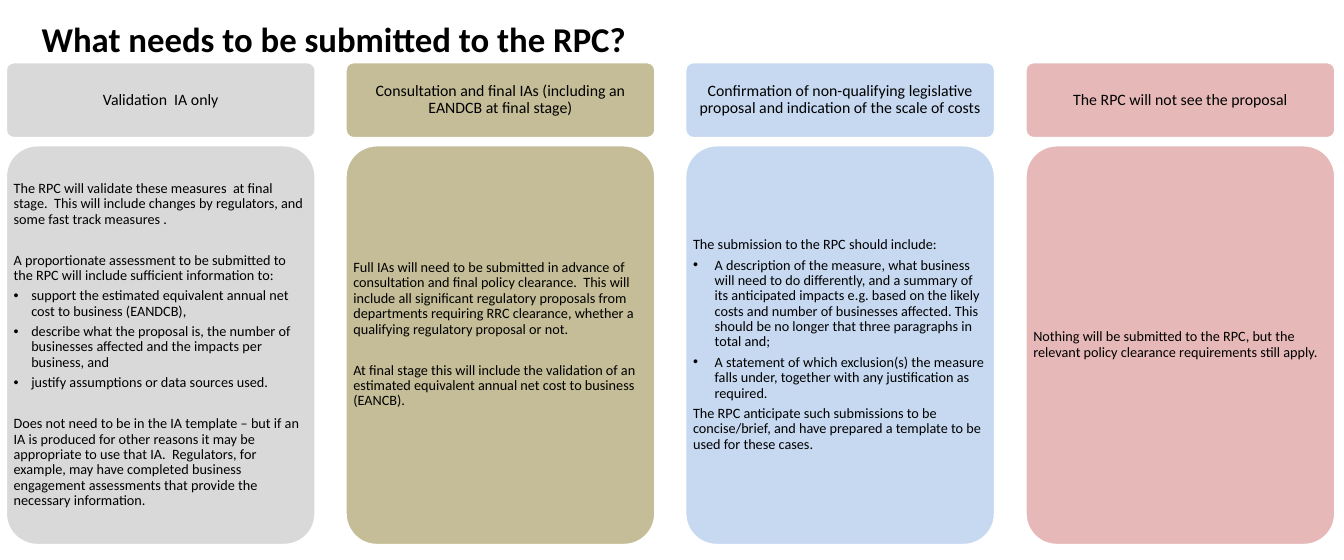
from dataclasses import dataclass

from lxml import etree
from pptx import Presentation
from pptx.dml.color import RGBColor
from pptx.enum.shapes import MSO_SHAPE
from pptx.enum.text import MSO_ANCHOR, MSO_AUTO_SIZE, PP_ALIGN
from pptx.oxml.ns import qn
from pptx.util import Pt

ROUNDED = MSO_SHAPE.ROUNDED_RECTANGLE
MIDDLE = MSO_ANCHOR.MIDDLE
NO_FIT = MSO_AUTO_SIZE.NONE
LEFT, CENTER = PP_ALIGN.LEFT, PP_ALIGN.CENTER
PX = 9144  # 100 px to the inch


@dataclass(frozen=True)
class Theme:
    font: str = "Calibri"
    ink: str = "000000"
    edge: str = "FFFFFF"
    grey: str = "D9D9D9"
    sand: str = "C4BD97"
    blue: str = "C6D9F1"
    rose: str = "E6B9B8"
    title: int = 44
    heading: int = 20
    detail: int = 18
    after: float = 6.3
    section: float = 32.4


THEME = Theme()
PLAIN, SECTION_END, BULLET, LAST_BULLET = "plain", "section end", "bullet", "last bullet"

COLUMNS = [
    dict(heading="Validation  IA only", color=THEME.grey, hang=31, foot=3, details=[
        ("The RPC will validate these measures  at final stage.  This will include changes "
         "by regulators, and some fast track measures .", SECTION_END),
        ("A proportionate assessment to be submitted to the RPC will include sufficient "
         "information to:", PLAIN),
        ("support the estimated equivalent annual net cost to business (EANDCB),", BULLET),
        ("describe what the proposal is, the number of businesses affected and the impacts "
         "per business, and", BULLET),
        ("justify assumptions or data sources used.", LAST_BULLET),
        ("Does not need to be in the IA template – but if an IA is produced for other reasons "
         "it may be appropriate to use that IA.  Regulators, for example, may have completed "
         "business engagement assessments that provide the necessary information.", PLAIN),
    ]),
    dict(heading="Consultation and final IAs (including an EANDCB at final stage)",
         color=THEME.sand, hang=31, foot=39, details=[
        ("Full IAs will need to be submitted in advance of consultation and final policy "
         "clearance.  This will include all significant regulatory proposals from departments "
         "requiring RRC clearance, whether a qualifying regulatory proposal or not.", SECTION_END),
        ("At final stage this will include the validation of an estimated equivalent annual "
         "net cost to business (EANCB).", PLAIN),
    ]),
    dict(heading="Confirmation of non-qualifying legislative proposal and indication of the "
                 "scale of costs", color=THEME.blue, hang=38, foot=3, details=[
        ("The submission to the RPC should include:", PLAIN),
        ("A description of the measure, what business will need to do differently, and a "
         "summary of its anticipated impacts e.g. based on the likely costs and number of "
         "businesses affected. This should be no longer that three paragraphs in total and;",
         BULLET),
        ("A statement of which exclusion(s) the measure falls under, together with any "
         "justification as required.", BULLET),
        ("The RPC anticipate such submissions to be concise/brief, and have prepared a "
         "template to be used for these cases.", PLAIN),
    ]),
    dict(heading="The RPC will not see the proposal", color=THEME.rose, hang=31, foot=3, details=[
        ("Nothing will be submitted to the RPC, but the relevant policy clearance requirements "
         "still apply.", PLAIN),
    ]),
]


def write(frame, paragraphs, *, size, align=LEFT, bold=False, spacing=0.9, hang=0,
          insets=(3, 3, 3, 3)):
    """Fill a frame with (text, kind) pairs; insets run left, top, right, bottom."""
    frame.word_wrap = True
    frame.auto_size = NO_FIT
    frame.vertical_anchor = MIDDLE
    (frame.margin_left, frame.margin_top,
     frame.margin_right, frame.margin_bottom) = [inset * PX for inset in insets]
    for number, (text, kind) in enumerate(paragraphs):
        paragraph = frame.add_paragraph() if number else frame.paragraphs[0]
        paragraph.alignment = align
        paragraph.line_spacing = spacing
        paragraph.space_before = Pt(0)
        wide = kind in (SECTION_END, LAST_BULLET)
        paragraph.space_after = Pt(THEME.section if wide else THEME.after)
        bulleted = kind in (BULLET, LAST_BULLET)
        indent = hang * PX if bulleted else 0
        properties = paragraph._p.get_or_add_pPr()
        properties.set("marL", str(indent))
        properties.set("indent", str(-indent))
        if bulleted:
            etree.SubElement(properties, qn("a:buChar")).set("char", "•")
        else:
            etree.SubElement(properties, qn("a:buNone"))
        run = paragraph.add_run()
        run.text = text
        run.font.name = THEME.font
        run.font.size = Pt(size)
        run.font.bold = bold
        run.font.color.rgb = RGBColor.from_string(THEME.ink)


def place(shape, left, top, width, height):
    shape.left, shape.top, shape.width, shape.height = [
        length * PX for length in (left, top, width, height)]


deck = Presentation()
deck.slide_width, deck.slide_height = 2362 * PX, 984 * PX
slide = deck.slides.add_slide(deck.slide_layouts.get_by_name("Comparison"))
title, *bodies = slide.placeholders

place(title, 63, 26, 2244, 84)
write(title.text_frame, [("What needs to be submitted to the RPC?", PLAIN)],
      size=THEME.title, bold=True, spacing=1.0, insets=(10, 5, 10, 5))

CARD_WIDTH, HEADING_TOP, HEADING_HEIGHT, DETAIL_TOP, DETAIL_HEIGHT = 543, 110, 132, 256, 701
FIRST_LEFT, LAST_LEFT = 11, 1803

for number, (column, body) in enumerate(zip(COLUMNS, bodies)):
    left = FIRST_LEFT + number * (LAST_LEFT - FIRST_LEFT) // (len(COLUMNS) - 1)
    cards = []
    for top, height in ((HEADING_TOP, HEADING_HEIGHT), (DETAIL_TOP, DETAIL_HEIGHT)):
        card = slide.shapes.add_shape(ROUNDED, 0, 0, 0, 0)
        place(card, left, top, CARD_WIDTH, height)
        card.adjustments[0] = 0.1
        card.shadow.inherit = False
        card.fill.solid()
        card.fill.fore_color.rgb = RGBColor.from_string(column["color"])
        card.line.color.rgb = RGBColor.from_string(THEME.edge)
        card.line.width = Pt(2)
        cards.append(card)
    write(cards[0].text_frame, [(column["heading"], PLAIN)], size=THEME.heading,
          align=CENTER, insets=(10, 3, 10, 3))

    place(body, left + 10, DETAIL_TOP + 20, 522, 660)
    write(body.text_frame, column["details"], size=THEME.detail, hang=column["hang"],
          insets=(3, 3, 3, column["foot"]))
    cards[1]._element.addnext(body._element)  # text in front of its card

deck.save("out.pptx")
